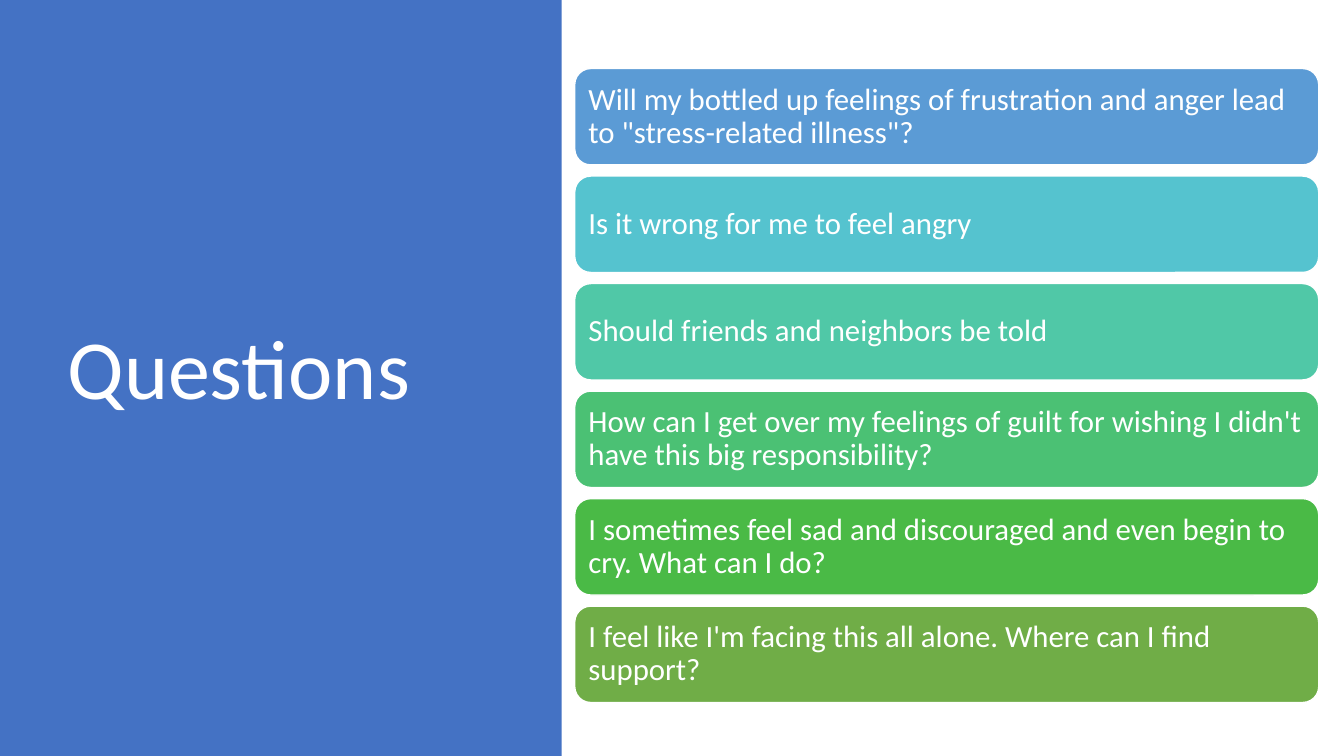
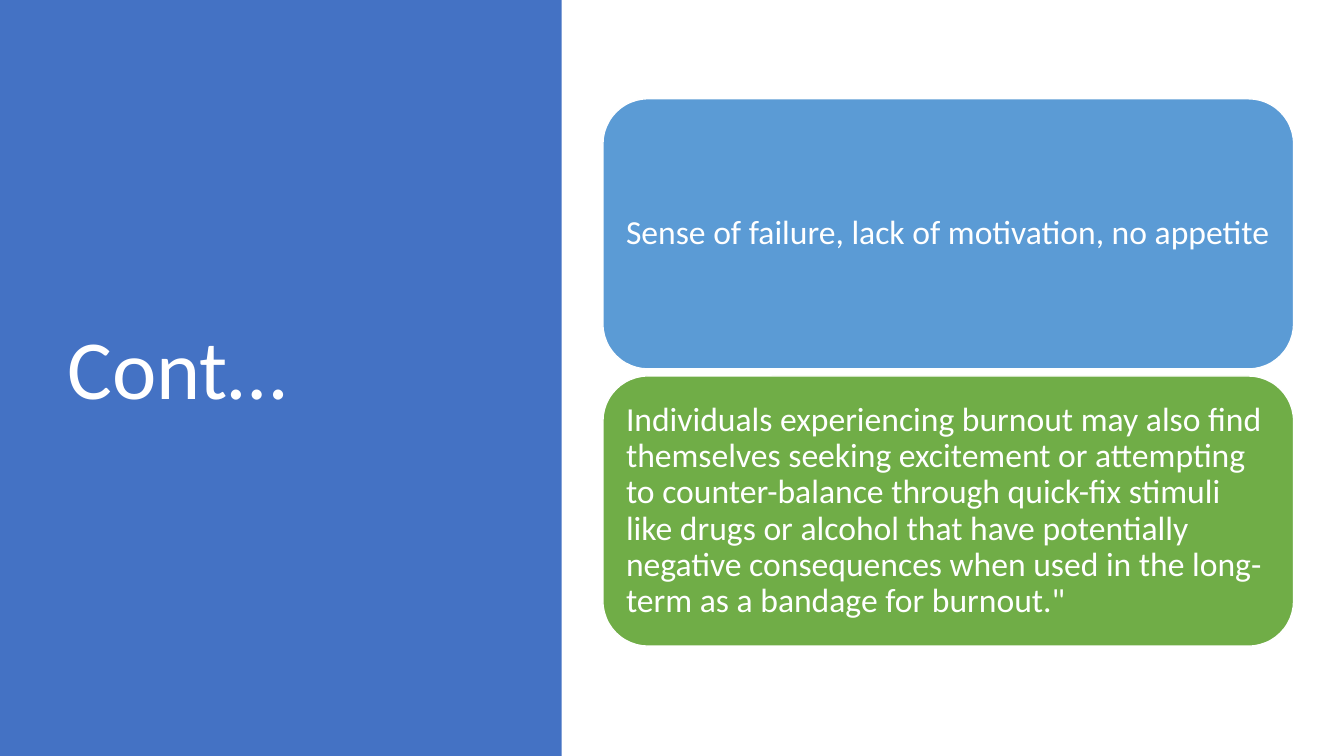
import pptx
import pptx.dml.color
import pptx.enum.shapes
import pptx.enum.text
import pptx.util

WIDTH, HEIGHT = 13.33, 7.5
BAND_WIDTH = 5.57
FONT = "Calibri"
WHITE, BAND_BLUE = "FFFFFF", "4472C4"
SKY, TURQUOISE, TEAL = "5B9BD5", "55C3CF", "50C8A7"
MINT, GREEN, OLIVE = "4BC174", "4ABA46", "70AD47"

QUESTIONS = [
    ("Will my bottled up feelings of frustration and anger lead to "
     "\"stress-related illness\"?", SKY),
    ("Is it wrong for me to feel angry", TURQUOISE),
    ("Should friends and neighbors be told", TEAL),
    ("How can I get over my feelings of guilt for wishing I didn't have "
     "this big responsibility?", MINT),
    ("I sometimes feel sad and discouraged and even begin to cry. "
     "What can I do?", GREEN),
    ("I feel like I'm facing this all alone. Where can I find support?", OLIVE),
]
SIGNS = [
    ("Sense of failure, lack of motivation, no appetite", SKY),
    ("Individuals experiencing burnout may also find themselves seeking "
     "excitement or attempting to counter-balance through quick-fix stimuli "
     "like drugs or alcohol that have potentially negative consequences when "
     "used in the long-term as a bandage for burnout.\"", OLIVE),
]


def rgb(color):
    return pptx.dml.color.RGBColor.from_string(color)


def inches(*lengths):
    return [pptx.util.Inches(length) for length in lengths]


def write(shape, text, size, inset):
    """Set white, left-aligned, vertically centred text in a shape."""
    frame = shape.text_frame
    frame.text = text
    frame.word_wrap = True
    frame.auto_size = pptx.enum.text.MSO_AUTO_SIZE.NONE
    frame.vertical_anchor = pptx.enum.text.MSO_ANCHOR.MIDDLE
    frame.margin_left = frame.margin_right = pptx.util.Inches(inset)
    frame.margin_top = frame.margin_bottom = pptx.util.Inches(inset)
    para = frame.paragraphs[0]
    para.alignment = pptx.enum.text.PP_ALIGN.LEFT
    para.line_spacing = 0.9
    font = para.runs[0].font
    font.name, font.size = FONT, pptx.util.Pt(size)
    font.color.rgb = rgb(WHITE)


def add_block(page, kind, box, fill):
    block = page.shapes.add_shape(kind, *inches(*box))
    block.shadow.inherit = False
    block.fill.solid()
    block.fill.fore_color.rgb = rgb(fill)
    block.line.fill.background()
    return block


def add_banded_page(deck, heading):
    """Add a slide with its title on a full-height band at the left."""
    page = deck.slides.add_slide(deck.slide_layouts.get_by_name("Title Only"))
    title = page.shapes.title
    title.left, title.top, title.width, title.height = inches(
        0.57, 0.68, 4.16, 6.02)
    write(title, heading, 60, 0.1)
    band = add_block(page, pptx.enum.shapes.MSO_SHAPE.RECTANGLE,
                     (0, 0, BAND_WIDTH, HEIGHT), BAND_BLUE)
    title.element.addprevious(band.element)
    return page


def add_card_stack(page, box, cards, gap, size, inset):
    """Fill a box with equally tall rounded cards."""
    left, top, width, height = box
    card_height = (height - gap * (len(cards) - 1)) / len(cards)
    for row, (text, fill) in enumerate(cards):
        card_top = top + row * (card_height + gap)
        card = add_block(page, pptx.enum.shapes.MSO_SHAPE.ROUNDED_RECTANGLE,
                         (left, card_top, width, card_height), fill)
        card.line.color.rgb = rgb(WHITE)
        card.line.width = pptx.util.Pt(1)
        write(card, text, size, inset)


def main():
    deck = pptx.Presentation()
    deck.slide_width, deck.slide_height = inches(WIDTH, HEIGHT)
    page = add_banded_page(deck, "Questions")
    add_card_stack(page, (5.7, 0.68, 7.38, 6.29), QUESTIONS, 0.11, 22, 0.09)
    page = add_banded_page(deck, "Cont…")
    add_card_stack(page, (5.98, 0.98, 6.85, 5.43), SIGNS, 0.07, 24, 0.1)
    deck.save("out.pptx")


if __name__ == "__main__":
    main()
